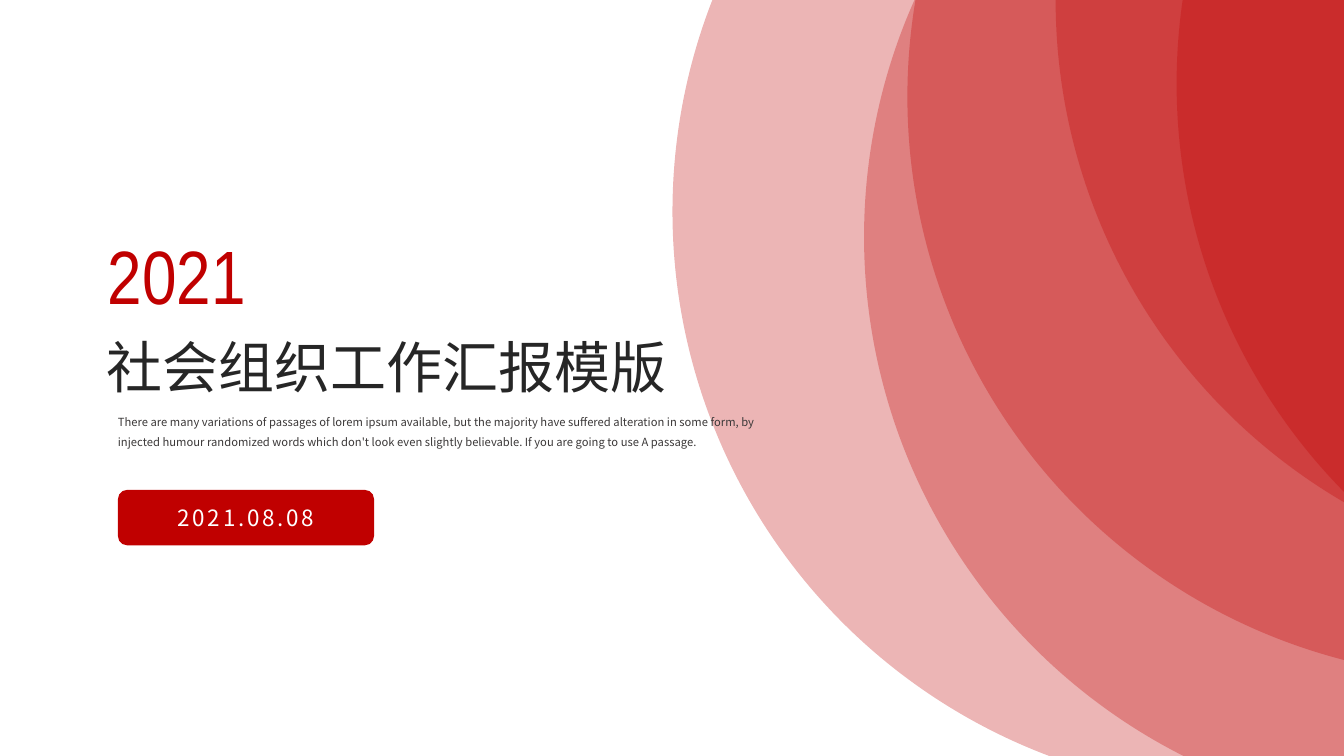
from lxml.etree import SubElement
from pptx import Presentation
from pptx.dml.color import RGBColor
from pptx.enum.shapes import MSO_SHAPE as Shape
from pptx.enum.text import MSO_AUTO_SIZE as AutoSize, PP_ALIGN as Align
from pptx.oxml.ns import qn
from pptx.util import Inches, Pt

RED = RGBColor(0xC0, 0x00, 0x00)
INK = RGBColor(0x26, 0x26, 0x26)
GREY = RGBColor(0x3B, 0x38, 0x38)
WHITE = RGBColor(0xFF, 0xFF, 0xFF)

LATIN_FONT = "Arial Narrow"
CJK_FONT = "Noto Sans CJK SC"
DISC_SIZE = 11.54
DISC_CORNERS = [(6.67, -3.67), (8.57, -3.42), (9, -4.81), (10.47, -5.77), (11.67, -4.94)]


class Cover:
    def __init__(self, slide, font, accent):
        self.slide = slide
        self.font = font
        self.accent = accent

    def shape(self, kind, left, top, width, height, opacity=None):
        block = self.slide.shapes.add_shape(
            kind, Inches(left), Inches(top), Inches(width), Inches(height))
        block.shadow.inherit = False
        block.line.fill.background()
        block.fill.solid()
        block.fill.fore_color.rgb = self.accent
        if opacity is not None:
            color = block.fill._xPr.find(qn("a:solidFill"))[0]
            SubElement(color, qn("a:alpha"), val=str(opacity * 1000))

    def text(self, words, left, top, width, height, size, color, font=None,
             align=Align.LEFT, line_spacing=None, tracking=None, inset=True):
        box = self.slide.shapes.add_textbox(
            Inches(left), Inches(top), Inches(width), Inches(height))
        frame = box.text_frame
        frame.word_wrap = True
        frame.auto_size = AutoSize.SHAPE_TO_FIT_TEXT
        if not inset:
            frame.margin_left = frame.margin_right = 0
            frame.margin_top = frame.margin_bottom = 0
        frame.text = words
        paragraph = frame.paragraphs[0]
        paragraph.alignment = align
        paragraph.line_spacing = line_spacing
        run = paragraph.runs[0]
        run.font.size = Pt(size)
        run.font.color.rgb = color
        run.font.name = font or self.font
        properties = run.font._element
        SubElement(properties, qn("a:ea"), typeface=font or self.font)
        if tracking:
            properties.set("spc", str(tracking * 100))


def main():
    deck = Presentation()
    deck.slide_width, deck.slide_height = Inches(13.33), Inches(7.5)
    cover = Cover(deck.slides.add_slide(deck.slide_layouts[6]), CJK_FONT, RED)

    for left, top in DISC_CORNERS:
        cover.shape(Shape.OVAL, left, top, DISC_SIZE, DISC_SIZE, opacity=29)

    cover.text("2021", 0.97, 2.22, 4.67, 1.01, 54, RED, font=LATIN_FONT)
    cover.text("社会组织工作汇报模版", 0.96, 3.25, 7.38, 0.77, 40, INK)
    cover.shape(Shape.ROUNDED_RECTANGLE, 1.17, 4.86, 2.54, 0.55)
    cover.text("2021.08.08", 1.17, 4.95, 2.54, 0.37, 16, WHITE,
               align=Align.CENTER, tracking=2)
    cover.text("There are many variations of passages of lorem ipsum available, "
               "but the majority have suffered alteration in some form, by "
               "injected humour randomized words which don't look even slightly "
               "believable. If you are going to use A passage.",
               1.17, 4.05, 6.6, 0.4, 8, GREY, line_spacing=1.5, inset=False)

    deck.save("out.pptx")


if __name__ == "__main__":
    main()
